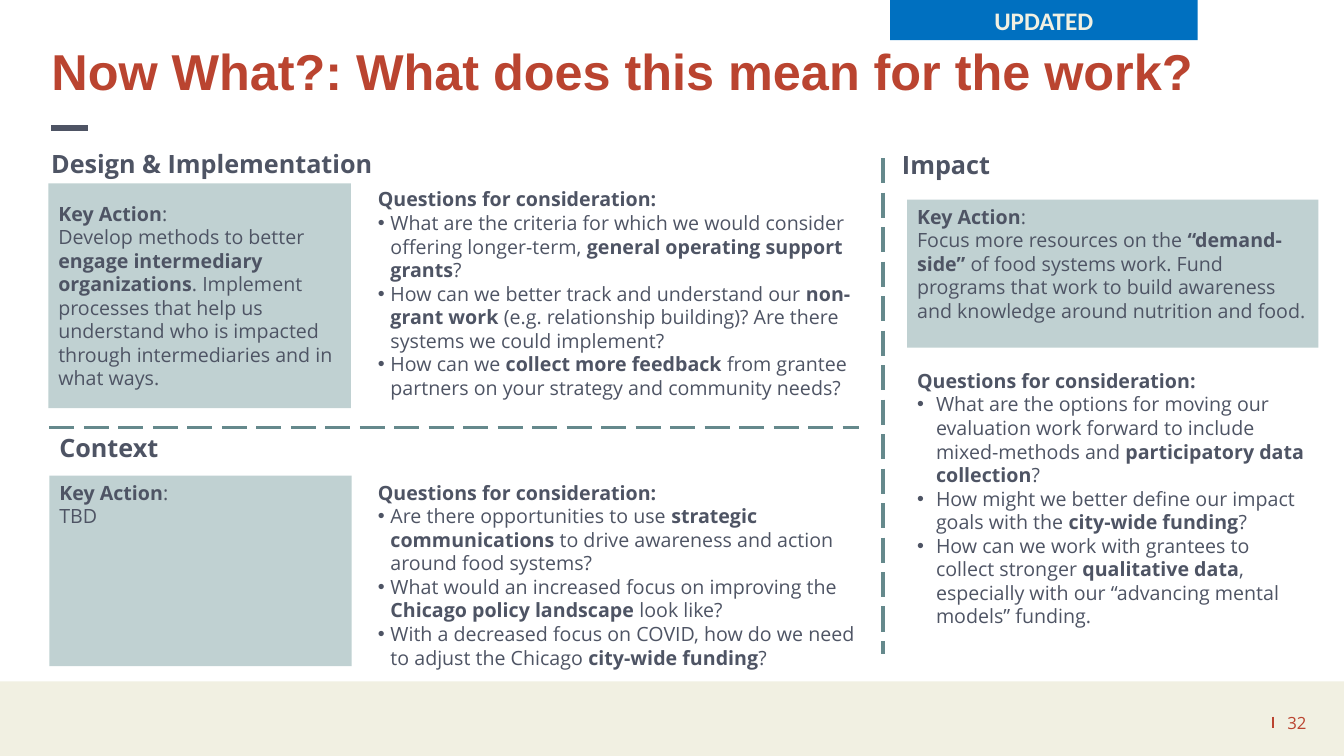
"""Build the "Now What?" slide of key actions and questions for consideration."""
import pptx
import pptx.util
import pptx.dml.color
import pptx.enum.dml
import pptx.enum.shapes
import pptx.enum.text
import pptx.oxml.ns
import lxml.etree

Pt = pptx.util.Pt
hex_color = pptx.dml.color.RGBColor.from_string
Anchor = pptx.enum.text.MSO_ANCHOR
Align = pptx.enum.text.PP_ALIGN
qn = pptx.oxml.ns.qn
SLATE, RUST, SAGE, CREAM = "4E5464", "BA4430", "C0D1D2", "F1F0E2"


def write(sp, lines, size=14, color=SLATE, font="Open Sans", align=Align.LEFT,
          anchor=Anchor.TOP, indent=0):
    """Fill a shape with lines; ** toggles bold and a leading bullet makes a list item."""
    tf = sp.text_frame
    tf.word_wrap = True
    tf.vertical_anchor = anchor
    for i, line in enumerate(lines):
        p = tf.add_paragraph() if i else tf.paragraphs[0]
        p.alignment = align
        if line.startswith("•"):
            pPr = p._p.get_or_add_pPr()
            pPr.set("marL", str(Pt(indent)))
            pPr.set("indent", str(-Pt(indent)))
            lxml.etree.SubElement(pPr, qn("a:buFont")).set("typeface", "Arial")
            lxml.etree.SubElement(pPr, qn("a:buChar")).set("char", "•")
        for j, part in enumerate(line.lstrip("•").split("**")):
            if part:
                r = p.add_run()
                r.text = part
                r.font.name = font
                r.font.size = Pt(size)
                r.font.bold = j % 2 == 1
                r.font.color.rgb = hex_color(color)


def panel(x, y, w, h, fill):
    """Add a plain filled rectangle."""
    sp = s.shapes.add_shape(pptx.enum.shapes.MSO_SHAPE.RECTANGLE, Pt(x), Pt(y), Pt(w), Pt(h))
    sp.shadow.inherit = False
    sp.fill.solid()
    sp.fill.fore_color.rgb = hex_color(fill)
    sp.line.fill.background()
    return sp


prs = pptx.Presentation()
prs.slide_width, prs.slide_height = Pt(960), Pt(540)
s = prs.slides.add_slide(prs.slide_layouts[5])

title = s.shapes.title
title.left, title.top, title.width, title.height = Pt(29.5), Pt(29.5), Pt(894.2), Pt(46.8)
title.fill.solid()
title.fill.fore_color.rgb = hex_color("FFFFFF")
write(title, ["**Now What?: What does this mean for the work?**"], 36, RUST, "Arial",
      anchor=Anchor.MIDDLE)
title.text_frame.paragraphs[0].line_spacing = 0.9

panel(0, 486.7, 960, 53.3, CREAM)
number = s.shapes.add_textbox(Pt(890.6), Pt(501.8), Pt(49.7), Pt(28.8))
write(number, ["32"], 12, RUST, align=Align.RIGHT, anchor=Anchor.MIDDLE)

headings = [
    ("Design & Implementation", 29.5, 102.2, 413.3),
    ("Context", 35.3, 305.3, 185),
    ("Impact", 637.2, 103, 185),
]
for text, x, y, w in headings:
    write(s.shapes.add_textbox(Pt(x), Pt(y), Pt(w), Pt(29)), [f"**{text}**"], 18)

actions = [
    ((34.6, 131, 216, 160.6), Anchor.MIDDLE,
     "Develop methods to better **engage intermediary organizations**. Implement processes "
     "that help us understand who is impacted through intermediaries and in what ways."),
    ((35.3, 339.8, 216, 136.1), Anchor.TOP, "TBD"),
    ((648, 142.6, 293.8, 105.8), Anchor.TOP,
     "Focus more resources on the **“demand-side” **of food systems work. Fund programs "
     "that work to build awareness and knowledge around nutrition and food."),
]
for place, anchor, text in actions:
    write(panel(*place, SAGE), ["**Key Action**:", text], anchor=anchor)

questions = [
    ((262.8, 130.3, 367.9, 159.8), 9, [
        "What are the criteria for which we would consider offering longer-term, "
        "**general operating support grants**?",
        "How can we better track and understand our **non-grant work **"
        "(e.g. relationship building)? Are there systems we could implement?",
        "How can we **collect more feedback **from grantee partners on your strategy "
        "and community needs?"]),
    ((262.8, 339.8, 367.9, 143.3), 9, [
        "Are there opportunities to use **strategic communications **to drive awareness "
        "and action around food systems?",
        "What would an increased focus on improving the **Chicago policy landscape **look like?",
        "With a decreased focus on COVID, how do we need to adjust the Chicago "
        "**city-wide funding**?"]),
    ((648, 259.9, 293.8, 193.7), 13.5, [
        "What are the options for moving our evaluation work forward to include "
        "mixed-methods and **participatory data collection**?",
        "How might we better define our impact goals with the **city-wide funding**?",
        "How can we work with grantees to collect stronger **qualitative data**, "
        "especially with our “advancing mental models” funding."]),
]
for place, indent, items in questions:
    sp = s.shapes.add_textbox(*map(Pt, place))
    write(sp, ["**Questions for consideration:**"] + ["•" + item for item in items],
          indent=indent)

rules = [
    (909.4, 511.9, 909.4, 519.8, RUST, 1, False),
    (36.7, 91.4, 62.6, 91.4, SLATE, 3.75, False),
    (35.3, 305.3, 613.4, 305.3, "65898C", 2.25, True),
    (630.7, 113, 630.7, 467.3, "65898C", 2.25, True),
]
for x1, y1, x2, y2, color, width, dashed in rules:
    c = s.shapes.add_connector(pptx.enum.shapes.MSO_CONNECTOR.STRAIGHT,
                               Pt(x1), Pt(y1), Pt(x2), Pt(y2))
    c.line.color.rgb = hex_color(color)
    c.line.width = Pt(width)
    if dashed:
        c.line.dash_style = pptx.enum.dml.MSO_LINE.LONG_DASH
    lxml.etree.SubElement(c._element.spPr, qn("a:effectLst"))

write(panel(635.8, 0, 219.6, 28.8, "0070C0"), ["**UPDATED**"], 18, CREAM, "Calibri", Align.CENTER)

prs.save("out.pptx")
